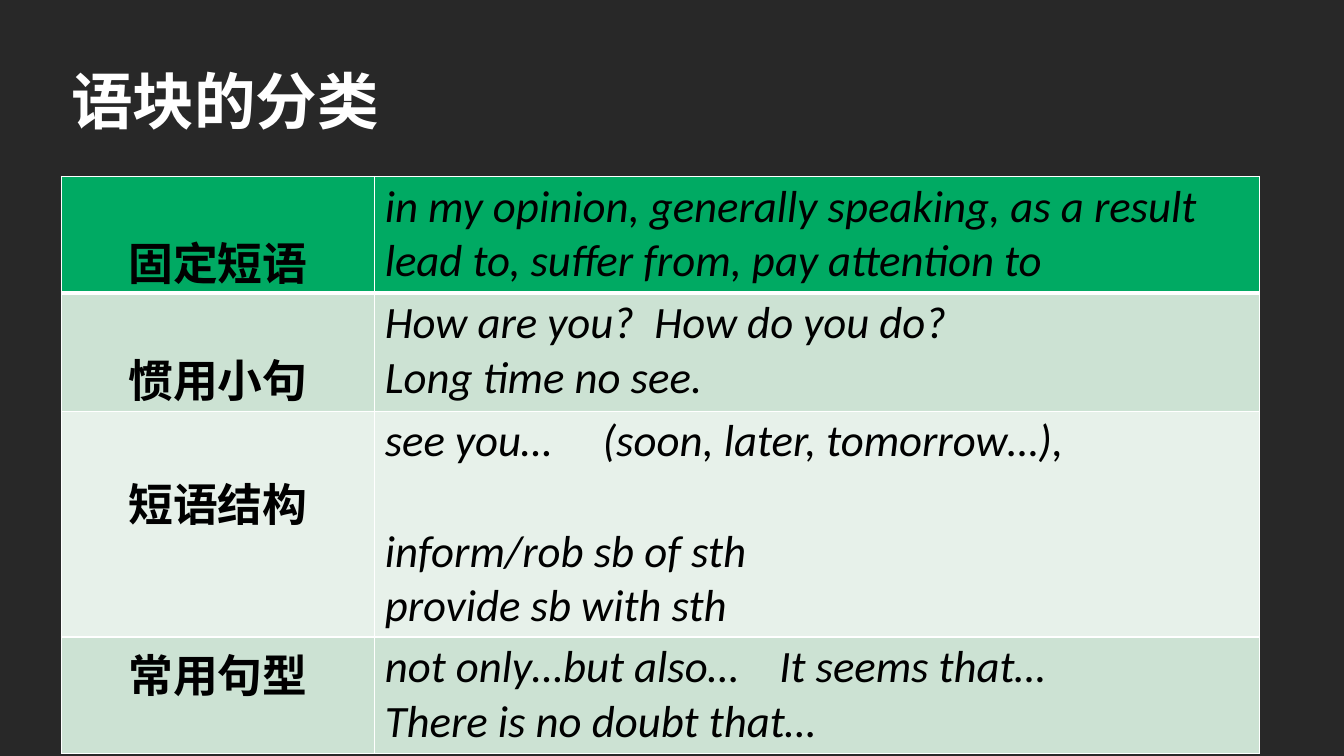
from lxml import etree
from pptx import Presentation
from pptx import util as u
from pptx.dml.color import RGBColor
from pptx.enum import text
from pptx.oxml import parse_xml
from pptx.oxml.ns import nsdecls, qn

CJK_FONT = "Noto Sans CJK SC"
LINE = 0.55  # height of one text line in the table, inches
COLUMN_WIDTHS = (3.11, 8.78)
# label, lines above the label, examples, lines between examples, row height, fill
CHUNK_TYPES = [
    ("固定短语", 0.88, ["in my opinion, generally speaking, as a result",
                    "lead to, suffer from, pay attention to"], 0, 1.16, "00AA63"),
    ("惯用小句", 0.88, ["How are you?  How do you do?",
                    "Long time no see."], 0, 1.17, "CCE2D3"),
    ("短语结构", 1, ["see you…     (soon, later, tomorrow…),",
                 "inform/rob sb of sth", "provide sb with sth"], 1, 2.24, "E7F1EA"),
    ("常用句型", 0, ["not only…but also…    It seems that…",
                 "There is no doubt that…"], 0, 1.16, "CCE2D3"),
]


def color(value):
    return RGBColor.from_string(value)


def add_run(paragraph, words, size, font, shade, bold=False, italic=False):
    run = paragraph.add_run()
    run.text = words
    run.font.size = u.Pt(size)
    run.font.name = font
    run.font.bold = bold
    run.font.italic = italic
    run.font.color.rgb = color(shade)
    east_asian = etree.SubElement(run.font._element, qn("a:ea"))
    east_asian.set("typeface", CJK_FONT)
    return run


def add_text_shadow(run):
    properties = run.font._element
    effects = parse_xml(
        f'<a:effectLst {nsdecls("a")}><a:outerShdw blurRad="38100" dist="38100" dir="2700000">'
        '<a:srgbClr val="000000"><a:alpha val="43000"/></a:srgbClr></a:outerShdw></a:effectLst>')
    properties.find(qn("a:solidFill")).addnext(effects)


def set_borders(cell, top, bottom):
    """Draw white cell edges; top and bottom are widths in points."""
    properties = cell._tc.get_or_add_tcPr()
    for index, (side, width) in enumerate(zip("LRTB", (1, 1, top, bottom))):
        properties.insert(index, parse_xml(
            f'<a:ln{side} {nsdecls("a")} w="{u.Pt(width)}"><a:solidFill>'
            f'<a:srgbClr val="FFFFFF"/></a:solidFill></a:ln{side}>'))


def add_title(slide, left, top, width, height):
    box = slide.shapes.add_textbox(*map(u.Inches, (left, top, width, height)))
    box.text_frame.word_wrap = True
    run = add_run(box.text_frame.paragraphs[0], "语块的分类", 44, CJK_FONT, "FFFFFF", bold=True)
    add_text_shadow(run)


def add_chunk_table(slide, left, top):
    width, height = sum(COLUMN_WIDTHS), sum(row[4] for row in CHUNK_TYPES)
    table = slide.shapes.add_table(len(CHUNK_TYPES), len(COLUMN_WIDTHS),
                                   *map(u.Inches, (left, top, width, height))).table
    for column, column_width in zip(table.columns, COLUMN_WIDTHS):
        column.width = u.Inches(column_width)

    for index, (label, lines_above, examples, gap, row_height, fill) in enumerate(CHUNK_TYPES):
        table.rows[index].height = u.Inches(row_height)
        label_cell, example_cell = table.rows[index].cells
        for cell in (label_cell, example_cell):
            cell.fill.solid()
            cell.fill.fore_color.rgb = color(fill)
            cell.margin_top = u.Inches(0.03)
            cell.margin_bottom = 0
            set_borders(cell, 3 if index == 1 else 1, 3 if index == 0 else 1)

        label_cell.margin_top = u.Inches(0.03 + lines_above * LINE)
        paragraph = label_cell.text_frame.paragraphs[0]
        paragraph.alignment = text.PP_ALIGN.CENTER
        add_run(paragraph, label, 32, "Calibri", "000000", bold=True)

        frame = example_cell.text_frame
        for number, example in enumerate(examples):
            paragraph = frame.add_paragraph() if number else frame.paragraphs[0]
            if number == 1:
                paragraph.space_before = u.Inches(gap * LINE)
            add_run(paragraph, example, 32, "Calibri", "000000", italic=True)


def main():
    presentation = Presentation()
    presentation.slide_width = u.Inches(13.34)
    presentation.slide_height = u.Inches(7.5)
    slide = presentation.slides.add_slide(presentation.slide_layouts[6])
    slide.background.fill.solid()
    slide.background.fill.fore_color.rgb = color("282828")
    add_title(slide, 0.61, 0.58, 3.54, 0.84)
    add_chunk_table(slide, 0.61, 1.75)
    presentation.save("out.pptx")


if __name__ == "__main__":
    main()
